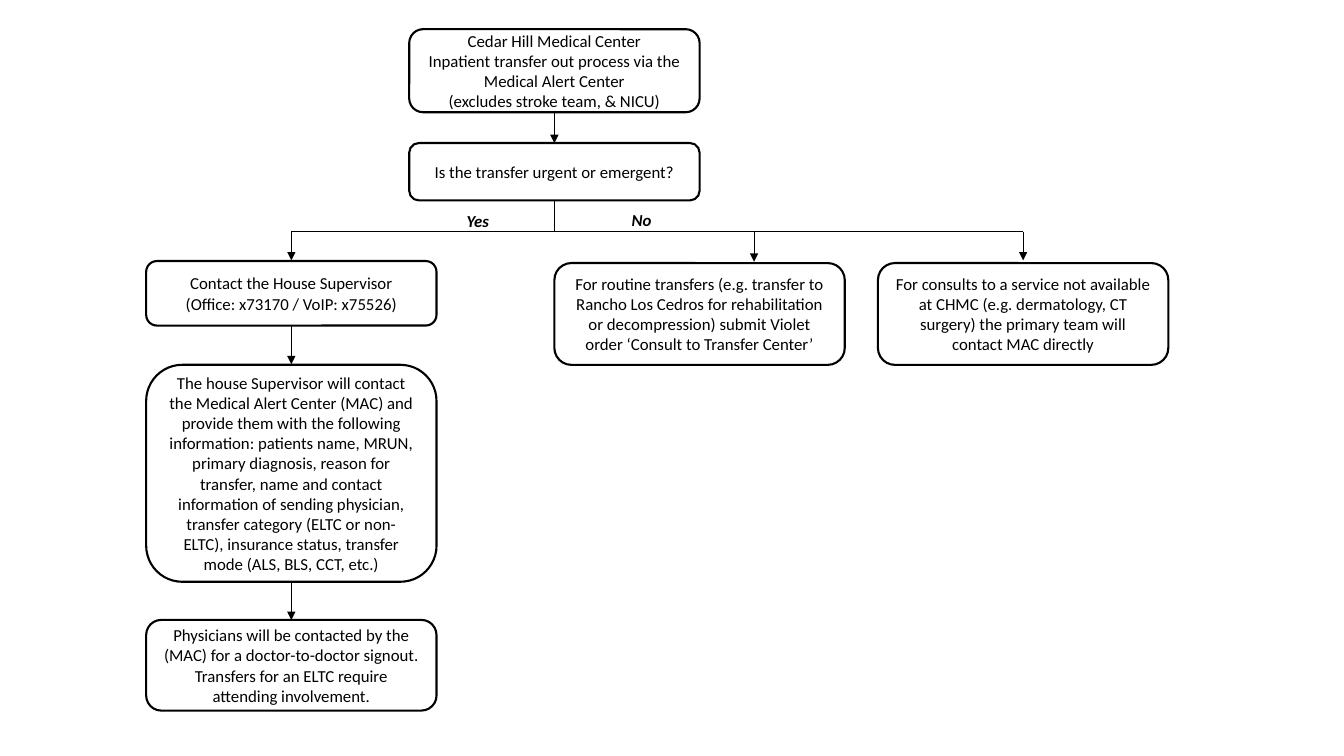
from dataclasses import dataclass

from lxml import etree
from pptx import Presentation
from pptx.dml.color import RGBColor
from pptx.enum import shapes, text
from pptx.oxml.ns import qn
from pptx.util import Pt


@dataclass(frozen=True)
class Theme:
    ink: RGBColor = RGBColor(0, 0, 0)
    paper: RGBColor = RGBColor(255, 255, 255)
    font: str = "Calibri"
    size: float = 12
    edge: float = 1.5
    rule: float = 0.5
    width: float = 207.4


class Chart:
    """Draws boxes, lines and labels on one slide, in points."""

    def __init__(self, slide, theme):
        self.slide = slide
        self.theme = theme

    def words(self, frame, lines, align=None, strong=None):
        frame.text = "\n".join(lines)
        for par in frame.paragraphs:
            par.alignment = align
            font = par.font
            font.name, font.size = self.theme.font, Pt(self.theme.size)
            font.color.rgb = self.theme.ink
            font.bold = font.italic = strong

    def box(self, mid, top, height, *lines):
        look = self.theme
        box = self.slide.shapes.add_shape(
            shapes.MSO_SHAPE.ROUNDED_RECTANGLE,
            Pt(mid - look.width / 2), Pt(top), Pt(look.width), Pt(height))
        box.shadow.inherit = False
        box.fill.solid()
        box.fill.fore_color.rgb = look.paper
        box.line.color.rgb = look.ink
        box.line.width = Pt(look.edge)
        box.text_frame.word_wrap = True
        box.text_frame.vertical_anchor = text.MSO_ANCHOR.MIDDLE
        self.words(box.text_frame, lines, text.PP_ALIGN.CENTER)

    def line(self, x1, y1, x2, y2, arrow=False):
        line = self.slide.shapes.add_connector(
            shapes.MSO_CONNECTOR.STRAIGHT, Pt(x1), Pt(y1), Pt(x2), Pt(y2))
        line.line.color.rgb = self.theme.ink
        line.line.width = Pt(self.theme.rule)
        props = line._element.spPr
        if arrow:
            tail = etree.SubElement(props.find(qn("a:ln")), qn("a:tailEnd"))
            tail.set("type", "triangle")
        etree.SubElement(props, qn("a:effectLst"))

    def label(self, left, top, width, answer, wrap):
        label = self.slide.shapes.add_textbox(
            Pt(left), Pt(top), Pt(width), Pt(21.6))
        label.text_frame.word_wrap = wrap
        label.text_frame.auto_size = text.MSO_AUTO_SIZE.SHAPE_TO_FIT_TEXT
        self.words(label.text_frame, [answer], strong=True)


def main():
    deck = Presentation()
    deck.slide_width, deck.slide_height = Pt(960), Pt(540)
    chart = Chart(deck.slides.add_slide(deck.slide_layouts[6]), Theme())

    # Centre lines of the columns and height of the branch bar
    urgent, start, routine, consult = 208.1, 396, 499.7, 730.8
    drop, bar = 538.6, 165.6

    # Opening question
    chart.box(start, 20.9, 59.3,
              "Cedar Hill Medical Center",
              "Inpatient transfer out process via the Medical Alert Center",
              "(excludes stroke team, & NICU)")
    chart.box(start, 102.2, 41,
              "Is the transfer urgent or emergent?")

    # Urgent path
    chart.box(urgent, 186.5, 46.1,
              "Contact the House Supervisor",
              "(Office: x73170 / VoIP: x75526)")
    chart.box(urgent, 260.6, 155,
              "The house Supervisor will contact the Medical Alert Center (MAC) "
              "and provide them with the following information: patients name, "
              "MRUN, primary diagnosis, reason for transfer, name and contact "
              "information of sending physician, transfer category (ELTC or "
              "non-ELTC), insurance status, transfer mode (ALS, BLS, CCT, etc.)")
    chart.box(urgent, 442.8, 64.8,
              "Physicians will be contacted by the (MAC) for a doctor-to-doctor "
              "signout. Transfers for an ELTC require attending involvement.")

    # Routine and consult paths
    chart.box(routine, 187.9, 72.7,
              "For routine transfers (e.g. transfer to Rancho Los Cedros for "
              "rehabilitation or decompression) submit Violet order "
              "‘Consult to Transfer Center’")
    chart.box(consult, 187.9, 72.7,
              "For consults to a service not available at CHMC (e.g. "
              "dermatology, CT surgery) the primary team will contact MAC "
              "directly")

    # Branch bar and its stem
    chart.line(urgent, bar, consult, bar)
    chart.line(start, bar, start, 143.2)

    # Downward arrows
    for mid, top, end in ((start, 80.2, 102.2),
                          (urgent, bar, 186), (drop, bar, 187),
                          (consult, bar, 186),
                          (urgent, 232.6, 260.2), (urgent, 415.9, 442.8)):
        chart.line(mid, top, mid, end, arrow=True)

    # Answers
    chart.label(326.2, 146.9, 35.3, "Yes", True)
    chart.label(444.2, 146.2, 28.8, "No", False)

    deck.save("out.pptx")


if __name__ == "__main__":
    main()
